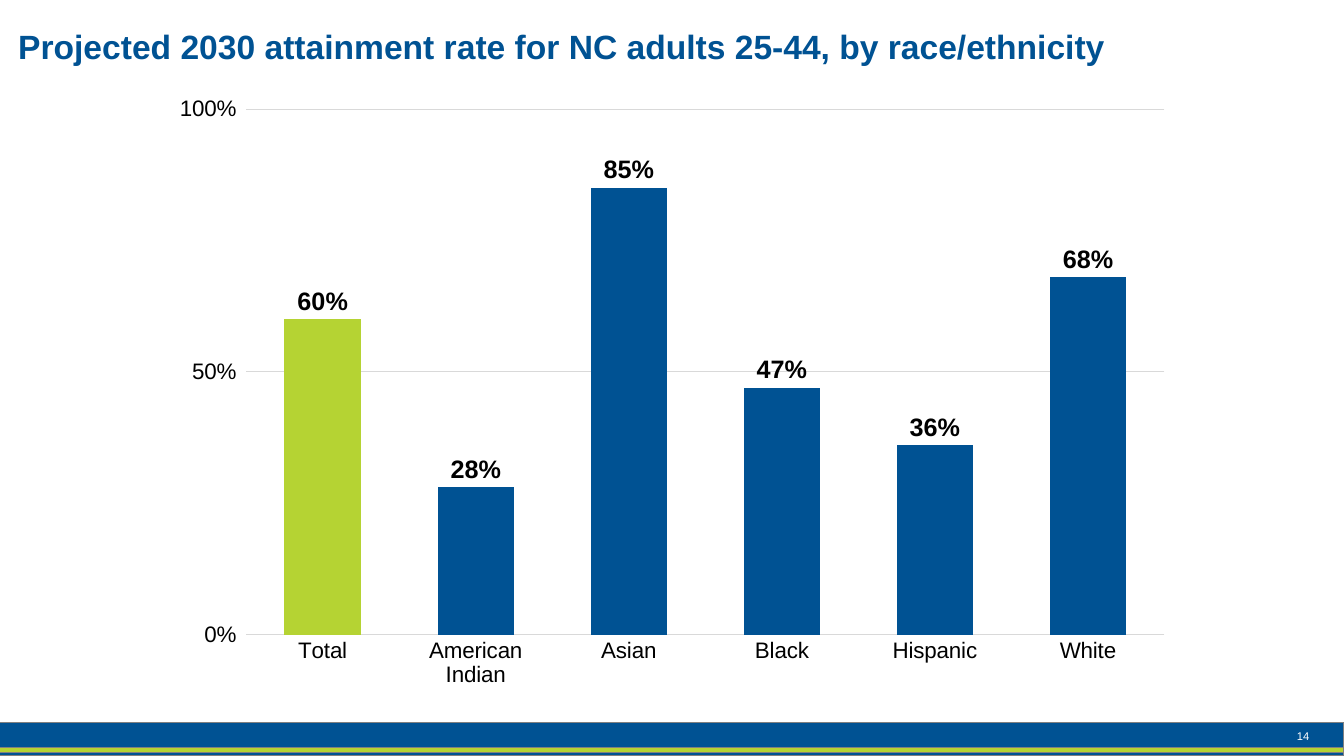
from dataclasses import dataclass
from typing import Any

from lxml.etree import SubElement
from pptx import Presentation
from pptx.chart.chart import Chart
from pptx.chart.data import CategoryChartData
from pptx.dml.color import RGBColor
from pptx.enum.chart import XL_CHART_TYPE, XL_LABEL_POSITION, XL_TICK_MARK
from pptx.enum.shapes import MSO_SHAPE
from pptx.enum.text import MSO_ANCHOR, PP_ALIGN
from pptx.oxml.ns import qn
from pptx.slide import Slide
from pptx.util import Cm, Pt


@dataclass(frozen=True)
class Theme:
    face: str = "Arial"
    blue: str = "005293"
    green: str = "B5D333"
    edge: str = "808080"
    grid: str = "D9D9D9"
    black: str = "000000"
    white: str = "FFFFFF"
    title: int = 24
    label: int = 18
    axis: int = 16
    page: int = 8
    rule: float = 0.75


THEME = Theme()


@dataclass(frozen=True)
class Box:
    left: float
    top: float
    width: float
    height: float

    def spot(self) -> tuple[Cm, Cm, Cm, Cm]:
        return Cm(self.left), Cm(self.top), Cm(self.width), Cm(self.height)


@dataclass(frozen=True)
class Band:
    box: Box
    color: str


@dataclass(frozen=True)
class Label:
    box: Box
    text: str
    size: int
    color: str
    bold: bool
    align: PP_ALIGN
    anchor: MSO_ANCHOR
    wrap: bool


BANDS = [
    Band(Box(0, 18.2, 33.87, 0.85), THEME.blue),
    Band(Box(0, 18.84, 33.87, 0.13), THEME.green),
]
LABELS = [
    Label(Box(32.64, 18.37, 0.36, 0.33), "14", THEME.page, THEME.white,
          False, PP_ALIGN.RIGHT, MSO_ANCHOR.MIDDLE, False),
    Label(Box(0.46, 0.66, 32.56, 1.02),
          "Projected 2030 attainment rate for NC adults 25-44, by race/ethnicity",
          THEME.title, THEME.blue, True, PP_ALIGN.LEFT, MSO_ANCHOR.TOP, True),
]
RATES = {
    "Total": 0.6,
    "American Indian": 0.28,
    "Asian": 0.85,
    "Black": 0.47,
    "Hispanic": 0.36,
    "White": 0.68,
}
CHART = Box(4.01, 2.13, 25.83, 15.49)
PLOT = {"x": 0.085, "y": 0.04, "w": 0.896, "h": 0.855}


def apply(target: Any, values: dict[str, Any]) -> None:
    for name, value in values.items():
        setattr(target, name, value)


def style(font: Any, size: int, color: str, bold: bool = False) -> None:
    apply(font, {"name": THEME.face, "size": Pt(size), "bold": bold})
    font.color.rgb = RGBColor.from_string(color)


def paint(fill: Any, color: str) -> None:
    fill.solid()
    fill.fore_color.rgb = RGBColor.from_string(color)


def stroke(line: Any, color: str) -> None:
    line.width = Pt(THEME.rule)
    paint(line.fill, color)


def draw_band(slide: Slide, band: Band) -> None:
    shape = slide.shapes.add_shape(MSO_SHAPE.RECTANGLE, *band.box.spot())
    shape.shadow.inherit = False
    paint(shape.fill, band.color)
    stroke(shape.line, THEME.edge)


def draw_label(slide: Slide, label: Label) -> None:
    frame = slide.shapes.add_textbox(*label.box.spot()).text_frame
    apply(frame, {
        "margin_left": 0, "margin_top": 0, "margin_right": 0, "margin_bottom": 0,
        "word_wrap": label.wrap, "vertical_anchor": label.anchor,
    })
    line = frame.paragraphs[0]
    line.alignment = label.align
    run = line.add_run()
    run.text = label.text
    style(run.font, label.size, label.color, label.bold)


def fix_plot(chart: Chart) -> None:
    """Pin the inner plot area to fixed shares of the chart frame."""
    area = chart.plots[0]._element.getparent()
    for old in area.findall(qn("c:layout")):
        area.remove(old)
    layout = SubElement(area, qn("c:layout"))
    area.insert(0, layout)
    manual = SubElement(layout, qn("c:manualLayout"))
    modes = {"layoutTarget": "inner", "xMode": "edge", "yMode": "edge"}
    for name, value in (modes | PLOT).items():
        SubElement(manual, qn(f"c:{name}")).set("val", str(value))


def style_axes(chart: Chart) -> None:
    base, scale = chart.category_axis, chart.value_axis
    apply(base, {"major_tick_mark": XL_TICK_MARK.NONE, "has_major_gridlines": False})
    apply(scale, {
        "minimum_scale": 0, "maximum_scale": 1, "major_unit": 0.5,
        "major_tick_mark": XL_TICK_MARK.OUTSIDE, "has_major_gridlines": True,
    })
    for axis in (base, scale):
        axis.minor_tick_mark = XL_TICK_MARK.NONE
        style(axis.tick_labels.font, THEME.axis, THEME.black)
    apply(scale.tick_labels, {"number_format": "0%", "number_format_is_linked": False})
    scale.format.line.fill.background()
    for line in (base.format.line, scale.major_gridlines.format.line):
        stroke(line, THEME.grid)


def draw_chart(slide: Slide) -> None:
    data = CategoryChartData(number_format="0%")
    data.categories = list(RATES)
    data.add_series("Series 1", list(RATES.values()))
    chart = slide.shapes.add_chart(
        XL_CHART_TYPE.COLUMN_CLUSTERED, *CHART.spot(), data).chart
    apply(chart, {"has_legend": False, "has_title": False})
    style(chart.font, THEME.axis, THEME.black)
    fix_plot(chart)
    style_axes(chart)

    plot = chart.plots[0]
    apply(plot, {"gap_width": 100, "overlap": -25, "vary_by_categories": False})
    bars = plot.series[0]
    bars.invert_if_negative = False
    paint(bars.format.fill, THEME.blue)
    paint(bars.points[0].format.fill, THEME.green)
    apply(bars.data_labels, {
        "show_value": True, "position": XL_LABEL_POSITION.OUTSIDE_END,
        "number_format": "0%", "number_format_is_linked": False,
    })
    style(bars.data_labels.font, THEME.label, THEME.black, True)


def main() -> None:
    deck = Presentation()
    apply(deck, {"slide_width": Cm(33.87), "slide_height": Cm(19.05)})
    slide = deck.slides.add_slide(deck.slide_layouts[6])
    paint(slide.background.fill, THEME.white)
    for band in BANDS:
        draw_band(slide, band)
    for label in LABELS:
        draw_label(slide, label)
    draw_chart(slide)
    deck.save("out.pptx")


if __name__ == "__main__":
    main()
